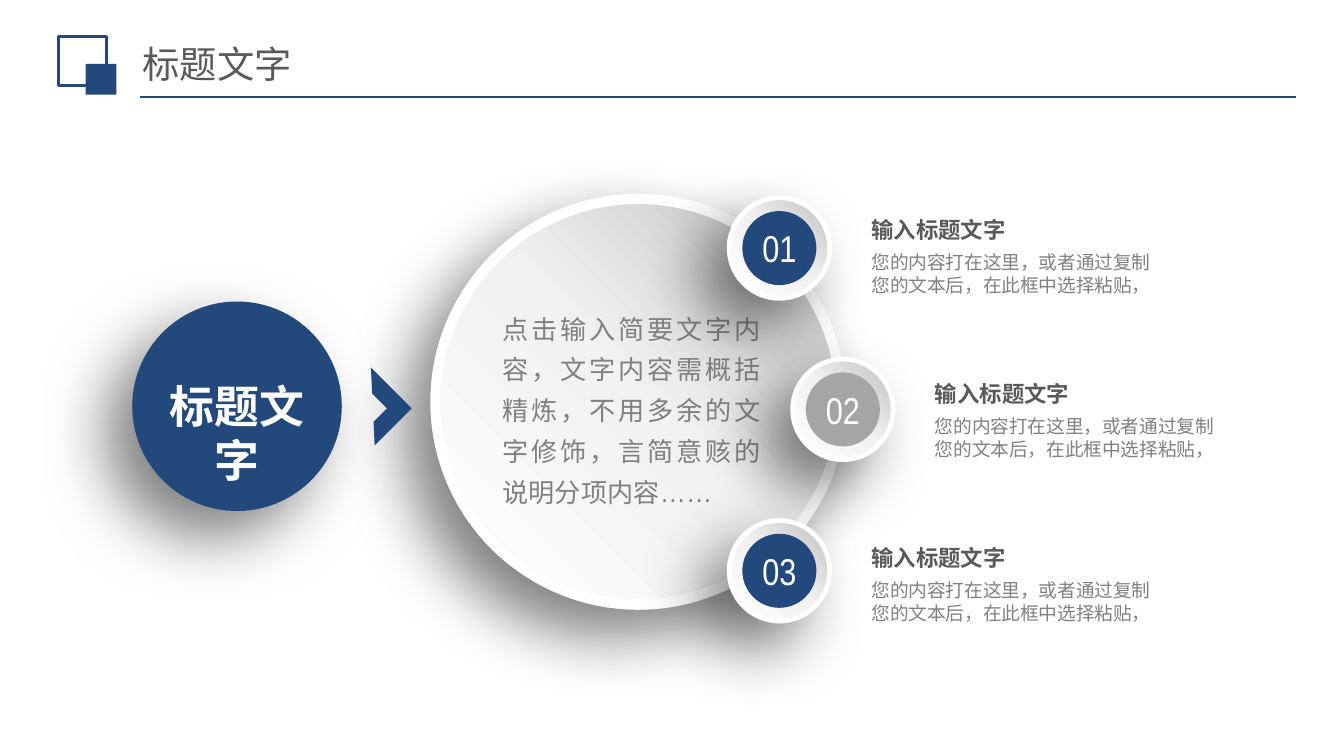
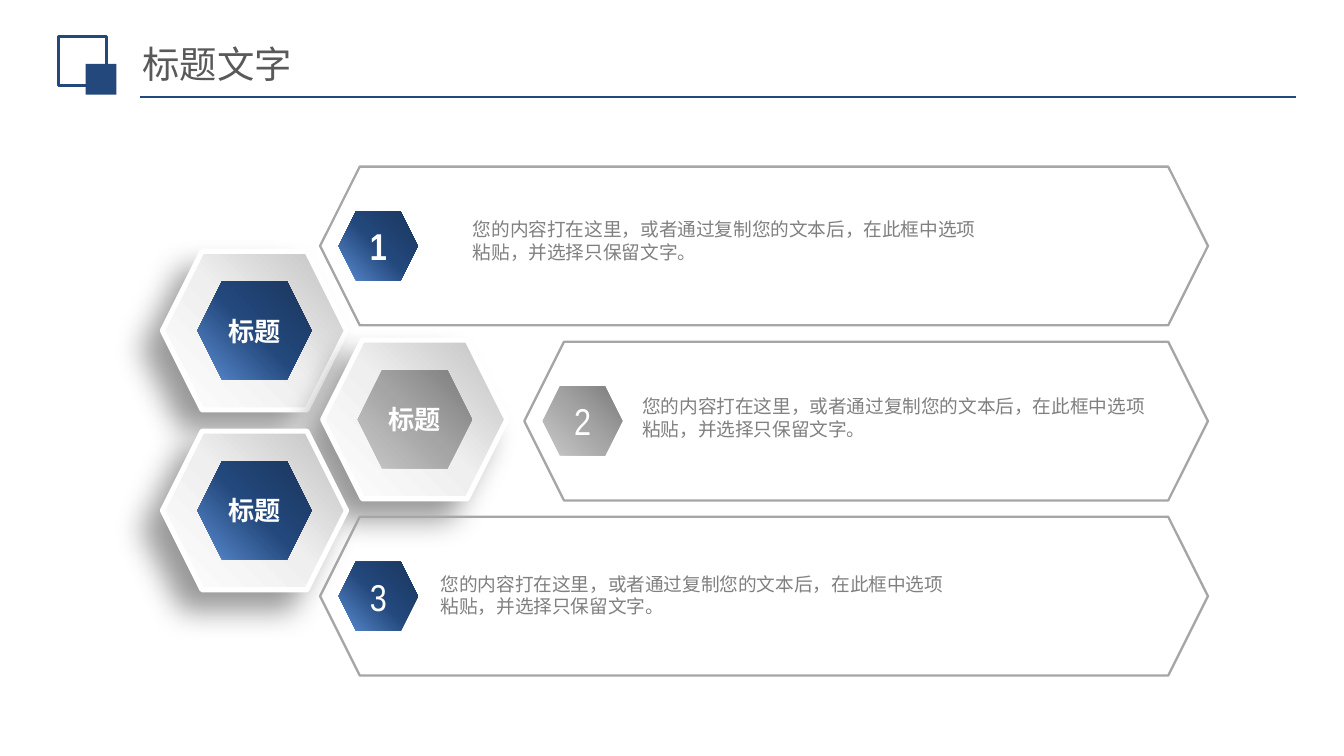
from dataclasses import dataclass
from typing import NamedTuple, Optional, Union

from lxml import etree
from pptx import Presentation
from pptx import util as u
from pptx.dml import color
from pptx.enum import shapes, text
from pptx.oxml import ns

Cm = u.Cm
PRESET = shapes.MSO_SHAPE


class TextStyle(NamedTuple):
    size: int
    font: str
    color: str
    bold: bool = False


class Shadow(NamedTuple):
    opacity: int
    blur: int
    distance: int


class Outline(NamedTuple):
    color: str
    width: float


class Box(NamedTuple):
    """A rectangle in centimetres."""
    left: float
    top: float
    width: float
    height: float

    def centred(self, width: float, height: float) -> "Box":
        return Box(self.left + (self.width - width) / 2,
                   self.top + (self.height - height) / 2, width, height)


Fill = Union[str, tuple, None]


@dataclass(frozen=True)
class Theme:
    navy: str = "23487C"
    grey: str = "A5A5A5"
    white: str = "FFFFFF"
    banner_line: Outline = Outline("A6A6A6", 1.25)
    pearl: tuple = ("FFFFFF", "F2F2F2", "BFBFBF")
    tile: tuple = ("FFFFFF", "EFEFEF", "BFBFBF")
    navy_shade: tuple = ("5B8CD1", "23487C", "1A365D")
    grey_shade: tuple = ("C9C9C9", "A5A5A5", "7C7C7C")
    deep_shadow: Shadow = Shadow(50, 35, 20)
    tile_shadow: Shadow = Shadow(40, 16, 14)
    title: TextStyle = TextStyle(20, "Noto Sans CJK SC", "595959")
    topic: TextStyle = TextStyle(24, "Arial", "FFFFFF", True)
    summary: TextStyle = TextStyle(14, "Arial", "808080")
    number: TextStyle = TextStyle(20, "Arial Narrow", "FFFFFF")
    tile_label: TextStyle = TextStyle(14, "Arial Narrow", "FFFFFF", True)
    heading: TextStyle = TextStyle(12, "DejaVu Sans", "595959", True)
    body: TextStyle = TextStyle(10, "DejaVu Sans", "808080")


THEME = Theme()


@dataclass(frozen=True)
class Point:
    """A numbered ring on the edge of the large disc, with its text."""
    number: str
    ring_left: float
    fill: str
    heading_width: float


@dataclass(frozen=True)
class Tile:
    left: float
    top: float
    fill: tuple


@dataclass(frozen=True)
class Banner:
    number: str
    left: float
    text_left: float
    fill: tuple
    bold: bool = False


POINTS = (
    Point("01", 13.78, THEME.navy, 7.37),
    Point("02", 14.98, THEME.grey, 6.6),
    Point("03", 13.78, THEME.navy, 6.6),
)
TILES = (
    Tile(3.07, 4.75, THEME.navy_shade),
    Tile(6.1, 6.43, THEME.grey_shade),
    Tile(3.07, 8.15, THEME.navy_shade),
)
BANNERS = (
    Banner("1", 6.05, 8.61, THEME.navy_shade, True),
    Banner("2", 9.91, 11.81, THEME.grey_shade),
    Banner("3", 6.05, 8.0, THEME.navy_shade),
)
SUMMARY = "点击输入简要文字内容，文字内容需概括精炼，不用多余的文字修饰，言简意赅的说明分项内容……"
POINT_BODY = "您的内容打在这里，或者通过复制您的文本后，在此框中选择粘贴，"
BANNER_BODY = "您的内容打在这里，或者通过复制您的文本后，在此框中选项粘贴，并选择只保留文字。"


def rgb(value: str) -> color.RGBColor:
    return color.RGBColor.from_string(value)


def add_color(parent, value: str):
    return etree.SubElement(parent, ns.qn("a:srgbClr"), val=value)


def set_gradient(shape, stops: tuple) -> None:
    """Spread the colours evenly from bottom left to top right."""
    shape.fill.gradient()
    shape.fill.gradient_angle = 45
    stop_list = shape.element.spPr.find(".//" + ns.qn("a:gsLst"))
    for stop in list(stop_list):
        stop_list.remove(stop)
    for index, value in enumerate(stops):
        position = index * 100000 // (len(stops) - 1)
        add_color(etree.SubElement(stop_list, ns.qn("a:gs"), pos=str(position)), value)


def set_shadow(shape, shadow: Shadow) -> None:
    effects = shape.element.spPr.find(ns.qn("a:effectLst"))
    outer = etree.SubElement(
        effects, ns.qn("a:outerShdw"), blurRad=str(u.Pt(shadow.blur)),
        dist=str(u.Pt(shadow.distance)), dir=str(135 * 60000), algn="tr", rotWithShape="0")
    etree.SubElement(add_color(outer, "000000"), ns.qn("a:alpha"), val=str(shadow.opacity * 1000))


def style_shape(shape, fill: Fill, outline: Optional[Outline] = None,
                shadow: Optional[Shadow] = None) -> None:
    shape.shadow.inherit = False
    if fill is None:
        shape.fill.background()
    elif isinstance(fill, tuple):
        set_gradient(shape, fill)
    else:
        shape.fill.solid()
        shape.fill.fore_color.rgb = rgb(fill)
    if outline is None:
        shape.line.fill.background()
    else:
        shape.line.color.rgb = rgb(outline.color)
        shape.line.width = u.Pt(outline.width)
    if shadow:
        set_shadow(shape, shadow)


def add_preset(slide, preset, box: Box, fill: Fill, outline: Optional[Outline] = None,
               shadow: Optional[Shadow] = None):
    shape = slide.shapes.add_shape(preset, *map(Cm, box))
    style_shape(shape, fill, outline, shadow)
    return shape


def write(shape, content: str, style: TextStyle, *, align=text.PP_ALIGN.LEFT,
          anchor=text.MSO_ANCHOR.TOP, inset: tuple = (0, 0), wrap: bool = True,
          spacing: float = 1.0) -> None:
    frame = shape.text_frame
    frame.text = content
    frame.word_wrap = wrap
    frame.vertical_anchor = anchor
    frame.margin_left = frame.margin_right = Cm(inset[0])
    frame.margin_top = frame.margin_bottom = Cm(inset[1])
    paragraph = frame.paragraphs[0]
    paragraph.alignment = align
    paragraph.line_spacing = spacing
    for run in paragraph.runs:
        run.font.size = u.Pt(style.size)
        run.font.name = style.font
        run.font.bold = style.bold
        run.font.color.rgb = rgb(style.color)
        etree.SubElement(run._r.get_or_add_rPr(), ns.qn("a:ea"), typeface=style.font)


def write_centred(shape, content: str, style: TextStyle) -> None:
    write(shape, content, style, align=text.PP_ALIGN.CENTER,
          anchor=text.MSO_ANCHOR.MIDDLE, inset=(0, 0.1), wrap=False)


def add_text(slide, box: Box, content: str, style: TextStyle, **options) -> None:
    write(slide.shapes.add_textbox(*map(Cm, box)), content, style, **options)


def add_titled_slide(presentation, title: str):
    slide = presentation.slides.add_slide(presentation.slide_layouts[6])
    rule = slide.shapes.add_connector(
        shapes.MSO_CONNECTOR.STRAIGHT, Cm(2.64), Cm(1.83), Cm(24.49), Cm(1.83))
    rule.line.color.rgb = rgb(THEME.navy)
    rule.line.width = u.Pt(1.25)
    etree.SubElement(rule.element.spPr, ns.qn("a:effectLst"))
    add_preset(slide, PRESET.RECTANGLE, Box(1.1, 0.69, 0.91, 0.93), None,
               Outline(THEME.navy, 1.5))
    add_preset(slide, PRESET.RECTANGLE, Box(1.62, 1.21, 0.58, 0.58), THEME.navy)
    add_text(slide, Box(2.51, 0.74, 16.38, 0.91), title, THEME.title,
             anchor=text.MSO_ANCHOR.MIDDLE, inset=(0.18, 0.1))
    return slide


def add_point(slide, point: Point, index: int) -> None:
    ring = Box(point.ring_left, 3.74 + 3.05 * index, 1.9, 1.9)
    add_preset(slide, PRESET.OVAL, ring, THEME.pearl, Outline(THEME.white, 2.5),
               THEME.deep_shadow)
    hub = add_preset(slide, PRESET.OVAL, ring.centred(1.4, 1.4), point.fill)
    write_centred(hub, point.number, THEME.number)
    left, top = point.ring_left + 2.31, 3.99 + 3.1 * index
    add_text(slide, Box(left, top, point.heading_width, 0.81), "输入标题文字",
             THEME.heading, inset=(0.38, 0), spacing=1.2)
    add_text(slide, Box(left, top + 0.76, 6.1, 0.89), POINT_BODY, THEME.body,
             inset=(0.38, 0))


def build_disc_slide(presentation) -> None:
    slide = add_titled_slide(presentation, "标题文字")
    add_preset(slide, PRESET.OVAL, Box(8.23, 3.76, 7.67, 7.67), THEME.pearl,
               Outline(THEME.white, 5.5), THEME.deep_shadow)
    add_preset(slide, PRESET.OVAL, Box(2.5, 5.7, 3.96, 3.96), THEME.navy,
               shadow=THEME.deep_shadow)
    add_text(slide, Box(2.79, 7.16, 3.38, 1.02), "标题文字", THEME.topic,
             align=text.PP_ALIGN.CENTER, wrap=False)
    add_text(slide, Box(9.5, 5.74, 4.88, 3.89), SUMMARY, THEME.summary,
             align=text.PP_ALIGN.JUSTIFY, spacing=1.3)
    chevron = add_preset(slide, PRESET.HALF_FRAME, Box(6.55, 7.14, 0.99, 1.09), THEME.navy)
    chevron.rotation = 135
    for index, point in enumerate(POINTS):
        add_point(slide, point, index)


def add_tile(slide, tile: Tile) -> None:
    box = Box(tile.left, tile.top, 3.48, 3.0)
    add_preset(slide, PRESET.HEXAGON, box, THEME.tile, Outline(THEME.white, 2.75),
               THEME.tile_shadow)
    core = add_preset(slide, PRESET.HEXAGON, box.centred(2.16, 1.85), tile.fill)
    write_centred(core, "标题", THEME.tile_label)


def add_banner(slide, banner: Banner, index: int) -> None:
    left, right, tip = banner.left, 22.83, 0.75
    top, height = 3.15 + 3.31 * index, 3.0
    middle, bottom = top + height / 2, top + height
    corners = ((left + tip, top), (right - tip, top), (right, middle),
               (right - tip, bottom), (left + tip, bottom), (left, middle))
    points = [(Cm(x), Cm(y)) for x, y in corners]
    builder = slide.shapes.build_freeform(*points[0])
    builder.add_line_segments(points[1:])
    style_shape(builder.convert_to_shape(), None, THEME.banner_line)

    badge = add_preset(slide, PRESET.HEXAGON, Box(left + 0.35, middle - 0.65, 1.5, 1.3),
                       banner.fill)
    write_centred(badge, banner.number, THEME.number._replace(bold=banner.bold))
    add_text(slide, Box(banner.text_left, 3.94 + 3.35 * index, 10.49, 1.19),
             BANNER_BODY, THEME.body, inset=(0.33, 0.18))


def build_hexagon_slide(presentation) -> None:
    slide = add_titled_slide(presentation, "标题文字")
    for tile in TILES:
        add_tile(slide, tile)
    for index, banner in enumerate(BANNERS):
        add_banner(slide, banner, index)


def main() -> None:
    presentation = Presentation()
    presentation.slide_width = Cm(25.4)
    presentation.slide_height = Cm(14.29)
    build_disc_slide(presentation)
    build_hexagon_slide(presentation)
    presentation.save("out.pptx")


if __name__ == "__main__":
    main()
